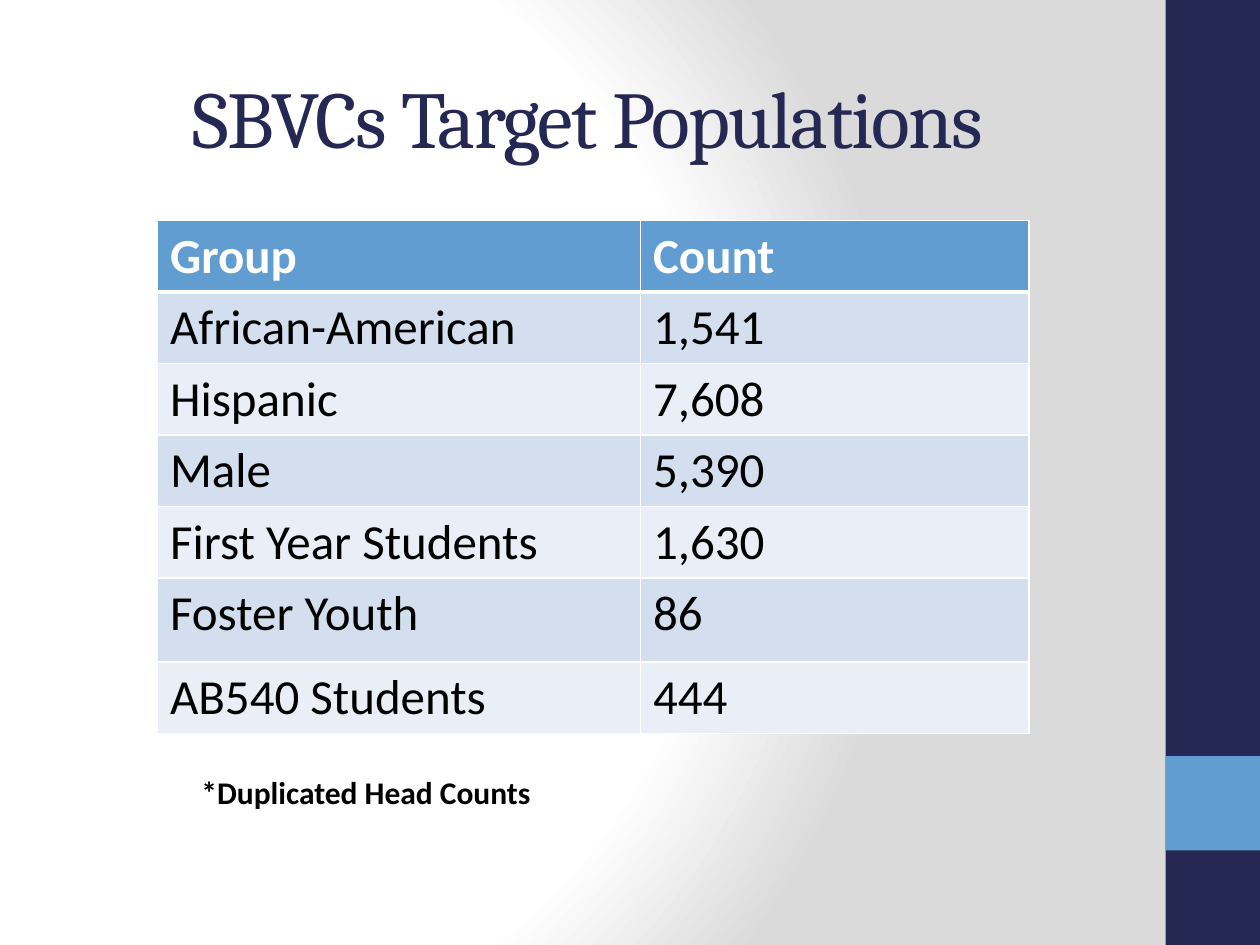
"""Build the target populations slide with its table and side band."""
from pptx import Presentation
from pptx.dml.color import RGBColor
from pptx.enum import shapes, text
from pptx.oxml import ns, parse_xml
from pptx.util import Pt

COLORS = {
    "navy": "242852", "blue": "629DD1", "band": "D3DFEE", "light": "EAEFF7",
    "white": "FFFFFF", "black": "000000", "gray": "DADADA",
}
ROWS = [
    ("Group", "Count"),
    ("African-American", "1,541"),
    ("Hispanic", "7,608"),
    ("Male", "5,390"),
    ("First Year Students", "1,630"),
    ("Foster Youth", "86"),
    ("AB540 Students", "444"),
]


def rgb(name):
    return RGBColor.from_string(COLORS[name])


def set_font(p, name, size, color, bold=False):
    p.font.name, p.font.size, p.font.bold = name, Pt(size), bold
    p.font.color.rgb = rgb(color)


def add_background(s):
    s.background.fill.gradient()
    grad = s.element.find(".//" + ns.qn("a:gradFill"))
    stops = "".join(
        f'<a:gs pos="{pos * 1000}"><a:srgbClr val="{COLORS[c]}"/></a:gs>'
        for pos, c in [(0, "white"), (75, "white"), (100, "gray")])
    grad.getparent().replace(grad, parse_xml(
        f'<a:gradFill {ns.nsdecls("a")} rotWithShape="1"><a:gsLst>{stops}</a:gsLst>'
        '<a:path path="circle"><a:fillToRect l="20000" t="50000" r="100000" b="50000"/>'
        '</a:path></a:gradFill>'))


def add_side_band(s, x, y, w, h):
    for top, height, color in [(y, h, "navy"), (y + h * 0.8, w, "blue")]:
        sp = s.shapes.add_shape(shapes.MSO_SHAPE.RECTANGLE,
                                Pt(x), Pt(top), Pt(w), Pt(height))
        sp.shadow.inherit = False
        sp.fill.solid()
        sp.fill.fore_color.rgb = rgb(color)
        sp.line.fill.background()


def add_text(s, x, y, w, h, words):
    tf = s.shapes.add_textbox(Pt(x), Pt(y), Pt(w), Pt(h)).text_frame
    tf.word_wrap = True
    p = tf.paragraphs[0]
    p.text = words
    return tf, p


def add_title(s, x, y, w, h):
    tf, p = add_text(s, x, y, w, h, "SBVCs Target Populations")
    tf.vertical_anchor = text.MSO_ANCHOR.MIDDLE
    p.alignment = text.PP_ALIGN.CENTER
    set_font(p, "Cambria", 46, "navy")
    p.runs[0].font._element.set("spc", "-100")


def add_borders(cell, bottom):
    pr = cell._tc.get_or_add_tcPr()
    for i, (side, width) in enumerate([("L", 1), ("R", 1), ("T", 1), ("B", bottom)]):
        pr.insert(i, parse_xml(
            f'<a:ln{side} {ns.nsdecls("a")} w="{Pt(width)}"><a:solidFill>'
            f'<a:srgbClr val="{COLORS["white"]}"/></a:solidFill></a:ln{side}>'))


def add_counts_table(s, x, y, col_widths, row_heights):
    table = s.shapes.add_table(len(ROWS), len(col_widths), Pt(x), Pt(y),
                               Pt(sum(col_widths)), Pt(sum(row_heights))).table
    for col, width in zip(table.columns, col_widths):
        col.width = Pt(width)
    for i, (row, height, values) in enumerate(zip(table.rows, row_heights, ROWS)):
        row.height = Pt(height)
        header = i == 0
        fill = "blue" if header else "band" if i % 2 else "light"
        for cell, value in zip(row.cells, values):
            cell.text = value
            cell.fill.solid()
            cell.fill.fore_color.rgb = rgb(fill)
            set_font(cell.text_frame.paragraphs[0], "Calibri", 28,
                     "white" if header else "black", header)
            add_borders(cell, 3 if i == 0 else 1)


def add_footnote(s, x, y, w, h):
    _, p = add_text(s, x, y, w, h, "*Duplicated Head Counts")
    set_font(p, "Calibri", 18, "black", True)


def main():
    prs = Presentation()
    prs.slide_width, prs.slide_height = Pt(720), Pt(540)
    s = prs.slides.add_slide(prs.slide_layouts[6])
    add_background(s)
    add_side_band(s, 666, 0, 54, 540)
    add_title(s, 36, 21.6, 600, 90)
    add_counts_table(s, 90, 126, [276, 222], [37.4] * 4 + [30, 48, 37.4])
    add_footnote(s, 108, 438, 462, 30)
    prs.save("out.pptx")


if __name__ == "__main__":
    main()
